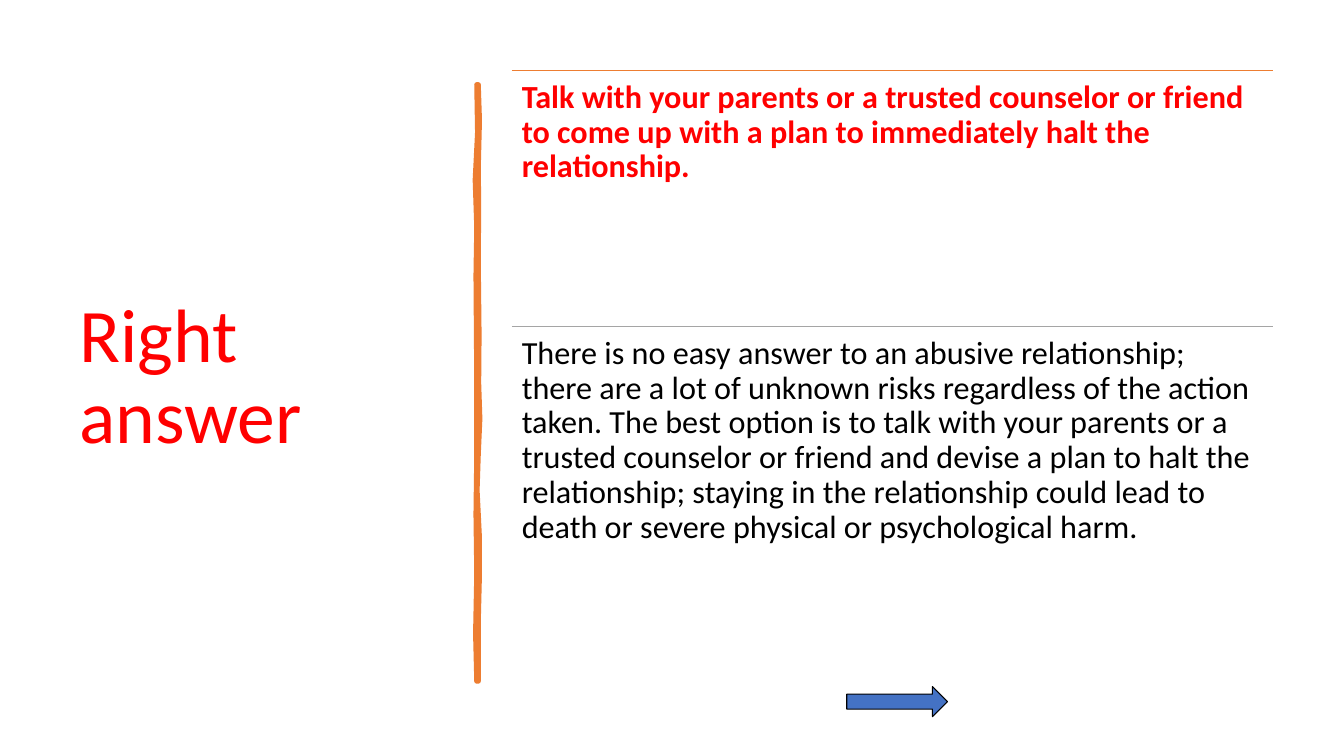
from dataclasses import dataclass

from lxml import etree
from pptx import Presentation
from pptx.dml.color import RGBColor
from pptx.enum.shapes import MSO_CONNECTOR, MSO_SHAPE
from pptx.enum.text import MSO_ANCHOR, PP_ALIGN
from pptx.oxml.ns import qn
from pptx.util import Cm, Pt

STRAIGHT = MSO_CONNECTOR.STRAIGHT
RIGHT_ARROW = MSO_SHAPE.RIGHT_ARROW
TOP, MIDDLE = MSO_ANCHOR.TOP, MSO_ANCHOR.MIDDLE
LEFT = PP_ALIGN.LEFT


@dataclass(frozen=True)
class Theme:
    """Colours, font and sizes of the slide."""
    font: str = "Calibri"
    red: RGBColor = RGBColor(0xFF, 0x00, 0x00)
    black: RGBColor = RGBColor(0x00, 0x00, 0x00)
    white: RGBColor = RGBColor(0xFF, 0xFF, 0xFF)
    orange: RGBColor = RGBColor(0xED, 0x7D, 0x31)
    grey: RGBColor = RGBColor(0xA5, 0xA5, 0xA5)
    blue: RGBColor = RGBColor(0x44, 0x72, 0xC4)
    title_size: Pt = Pt(54)
    body_size: Pt = Pt(23)
    rule_width: Pt = Pt(1)
    brush_width: Pt = Pt(3.25)
    arrow_width: Pt = Pt(0.75)


THEME = Theme()

ANSWER = (
    "Talk with your parents or a trusted counselor or friend to come up with "
    "a plan to immediately halt the relationship."
)
REASON = (
    "There is no easy answer to an abusive relationship; there are a lot of "
    "unknown risks regardless of the action taken. The best option is to talk "
    "with your parents or a trusted counselor or friend and devise a plan to "
    "halt the relationship; staying in the relationship could lead to death or "
    "severe physical or psychological harm."
)
ROWS = [
    (ANSWER, THEME.red, True, THEME.orange),
    (REASON, THEME.black, False, THEME.grey),
]

RIGHT_EDGE = [(0, 0), (0.06, 0.03), (0.14, 0), (0.2, 0.01), (0.3, 0), (0.42, 0.02),
              (0.5, 0.01), (0.56, 0.04), (0.62, 0), (0.68, -0.03), (0.76, 0.03),
              (0.82, 0.03), (0.9, 0), (1, 0)]
LEFT_EDGE = [(1, 0), (0.92, -0.03), (0.82, 0), (0.72, -0.02), (0.62, 0), (0.5, 0),
             (0.32, -0.02), (0.24, 0), (0.16, -0.04), (0.08, 0.02), (0, 0)]


def add_text(slide, box, text, size, color, bold=False, anchor=TOP):
    """Place one wrapped paragraph in the box."""
    tf = slide.shapes.add_textbox(*box).text_frame
    tf.word_wrap = True
    tf.vertical_anchor = anchor
    tf.margin_left = tf.margin_right = tf.margin_top = tf.margin_bottom = Cm(0.25)
    p = tf.paragraphs[0]
    p.alignment = LEFT
    p.line_spacing = 0.9
    r = p.add_run()
    r.text = text
    r.font.name = THEME.font
    r.font.size = size
    r.font.bold = bold
    r.font.color.rgb = color


def style_shape(sp, fill, line, width):
    """Give a shape a flat fill and outline."""
    sp.shadow.inherit = False
    sp.fill.solid()
    sp.fill.fore_color.rgb = fill
    sp.line.color.rgb = line
    sp.line.width = width


def add_brush_divider(slide, box):
    """Draw the wavy vertical brush stroke that fills the box."""
    left, top, width, height = box
    edges = [(left + width, RIGHT_EDGE), (left, LEFT_EDGE)]
    points = [(x + Cm(shift), top + int(height * share))
              for x, edge in edges for share, shift in edge]
    builder = slide.shapes.build_freeform(*points[0])
    builder.add_line_segments(points[1:], close=True)
    style_shape(builder.convert_to_shape(), THEME.orange, THEME.orange, THEME.brush_width)


def add_rule(slide, left, top, width, color):
    """Draw a thin horizontal rule."""
    line = slide.shapes.add_connector(STRAIGHT, left, top, left + width, top)
    line.line.color.rgb = color
    line.line.width = THEME.rule_width
    etree.SubElement(line._element.spPr, qn("a:effectLst"))


def add_ruled_rows(slide, box, rows):
    """Stack equal rows of text, each under its own rule."""
    left, top, width, height = box
    row_height = height // len(rows)
    for i, (text, color, bold, rule_color) in enumerate(rows):
        y = top + i * row_height
        add_rule(slide, left, y, width, rule_color)
        add_text(slide, (left, y, width, row_height), text, THEME.body_size, color, bold)


def add_next_arrow(slide, box):
    """Draw the arrow that points onward."""
    sp = slide.shapes.add_shape(RIGHT_ARROW, *box)
    style_shape(sp, THEME.blue, THEME.black, THEME.arrow_width)


def build_answer_slide(prs):
    """Add the slide with title, divider, rows and arrow."""
    slide = prs.slides.add_slide(prs.slide_layouts[6])
    slide.background.fill.solid()
    slide.background.fill.fore_color.rgb = THEME.white
    add_text(slide, (Cm(1.75), Cm(1.78), Cm(9.5), Cm(15.52)), "Right answer",
             THEME.title_size, THEME.red, anchor=MIDDLE)
    add_brush_divider(slide, (Cm(12.01), Cm(2.13), Cm(0.05), Cm(15.04)))
    add_next_arrow(slide, (Cm(21.34), Cm(17.3), Cm(2.54), Cm(0.76)))
    add_ruled_rows(slide, (Cm(12.9), Cm(1.78), Cm(19.18), Cm(12.9)), ROWS)


def main():
    """Build and save the presentation."""
    prs = Presentation()
    prs.slide_width, prs.slide_height = Cm(33.87), Cm(19.05)
    build_answer_slide(prs)
    prs.save("out.pptx")


if __name__ == "__main__":
    main()
